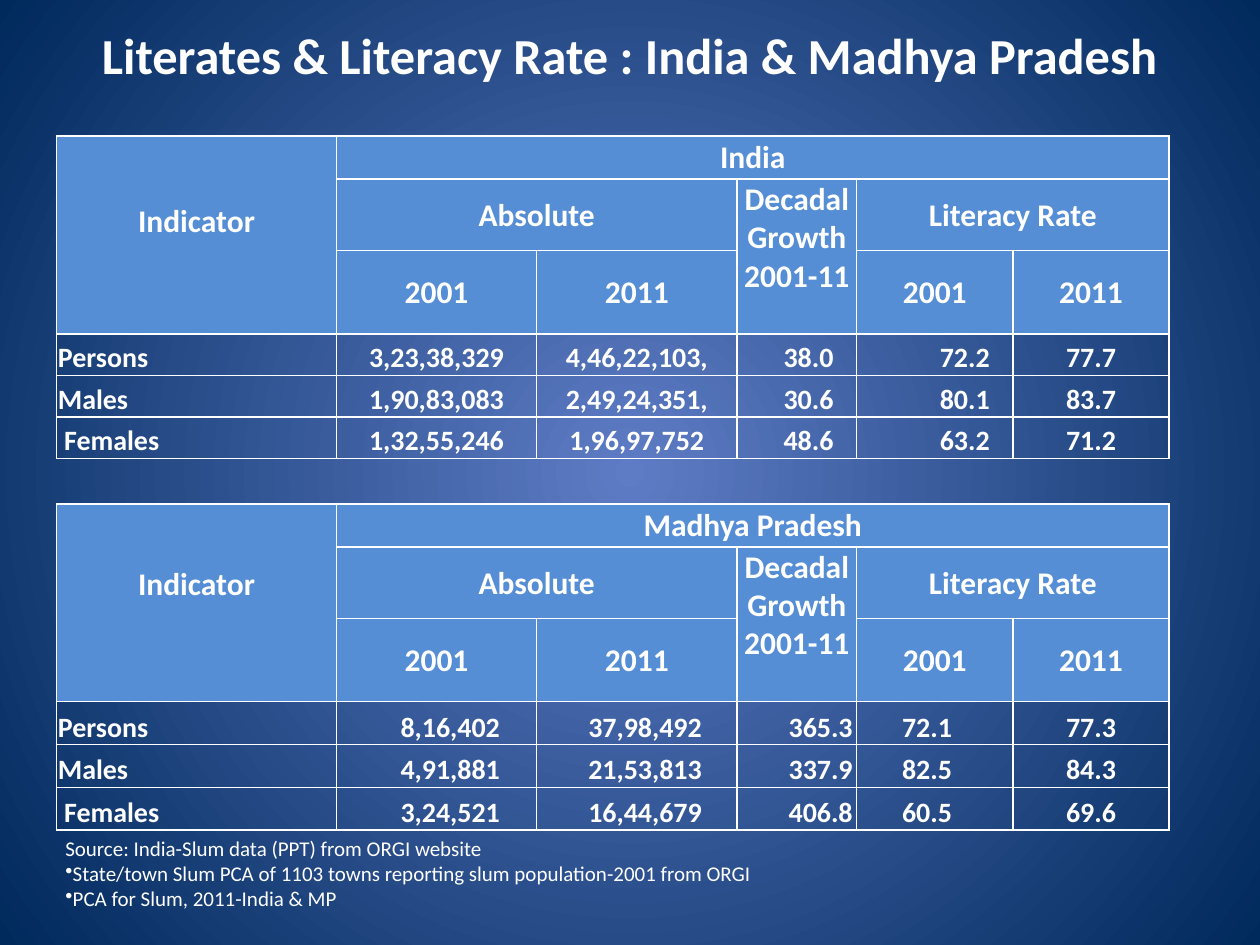
import pptx
import pptx.util
import pptx.dml.color
import pptx.enum.text
import pptx.oxml
import pptx.oxml.ns
from lxml import etree

Inches = pptx.util.Inches
qn = pptx.oxml.ns.qn
ALIGN = pptx.enum.text.PP_ALIGN
ANCHOR = pptx.enum.text.MSO_ANCHOR

THEME = {
    "font": "Calibri",
    "white": "FFFFFF", "header": "558ED5",
    "glow": "5E7CC5", "edge": "00295C",
    "title": 28.8, "head": 18, "body": 16, "note": 12,
}


def rgb(name):
    return pptx.dml.color.RGBColor.from_string(THEME[name])


def write(tf, text, size="body", bold=True, align=ALIGN.LEFT, indent=0, bullet=None, new=False):
    """Put one formatted paragraph into a text frame."""
    p = tf.add_paragraph() if new else tf.paragraphs[0]
    p.alignment = align
    pPr = p._p.get_or_add_pPr()
    pPr.set("marL", str(Inches(indent)))
    pPr.set("indent", "0")
    if bullet:
        etree.SubElement(pPr, qn("a:buChar")).set("char", bullet)
    r = p.add_run()
    r.text = text
    r.font.name = THEME["font"]
    r.font.size = pptx.util.Pt(THEME[size])
    r.font.bold = bold
    r.font.color.rgb = rgb("white")


prs = pptx.Presentation()
prs.slide_width, prs.slide_height = Inches(10), Inches(7.5)
s = prs.slides.add_slide(prs.slide_layouts[6])

# Background: radial gradient from the centre
fill = s.background.fill
fill.gradient()
for stop, name in zip(fill.gradient_stops, ("glow", "edge")):
    stop.color.rgb = rgb(name)
grad = s.element.find(".//" + qn("a:gradFill"))
grad.remove(grad.find(qn("a:lin")))
radial = etree.SubElement(grad, qn("a:path"))
radial.set("path", "circle")
centre = etree.SubElement(radial, qn("a:fillToRect"))
for side in "ltrb":
    centre.set(side, "50000")

# Title
tf = s.shapes.add_textbox(Inches(0.5), Inches(0.08), Inches(9), Inches(0.7)).text_frame
tf.word_wrap = True
tf.vertical_anchor = ANCHOR.MIDDLE
write(tf, "Literates & Literacy Rate : India & Madhya Pradesh", size="title", align=ALIGN.CENTER)

# Table contents; an indent of None centres the column
COLS = [2.22, 1.59, 1.59, 0.95, 1.24, 1.24]
HEAD_ROWS = [0.34, 0.57, 0.66]
TABLES = [
    {"region": "India", "top": 1.08, "row": 0.33, "lift": 0.22,
     "indents": [0, None, None, 0.36, 0.65, None],
     "rows": [
         ["Persons", "3,23,38,329", "4,46,22,103,", "38.0", "72.2", "77.7"],
         ["Males", "1,90,83,083", "2,49,24,351,", "30.6", "80.1", "83.7"],
         ["Females", "1,32,55,246", "1,96,97,752", "48.6", "63.2", "71.2"]]},
    {"region": "Madhya Pradesh", "top": 4, "row": 0.34, "lift": 0.3,
     "indents": [0, 0.5, 0.4, 0.4, 0.35, None],
     "rows": [
         ["Persons", "8,16,402", "37,98,492", "365.3", "72.1", "77.3"],
         ["Males", "4,91,881", "21,53,813", "337.9", "82.5", "84.3"],
         ["Females", "3,24,521", "16,44,679", "406.8", "60.5", "69.6"]]},
]

for data in TABLES:
    heights = HEAD_ROWS + [data["row"]] * len(data["rows"])
    table = s.shapes.add_table(len(heights), len(COLS), Inches(0.45), Inches(data["top"]),
                               Inches(sum(COLS)), Inches(sum(heights))).table
    table.first_row = table.horz_banding = False
    for col, width in zip(table.columns, COLS):
        col.width = Inches(width)
    for row, height in zip(table.rows, heights):
        row.height = Inches(height)

    # Borders, margins and fills
    for i, row in enumerate(table.rows):
        for cell in row.cells:
            tcPr = cell._tc.get_or_add_tcPr()
            for side in "LRTB":
                tcPr.append(pptx.oxml.parse_xml(
                    f'<a:ln{side} xmlns:a="http://schemas.openxmlformats.org/drawingml/2006/main" '
                    f'w="12700"><a:solidFill><a:srgbClr val="{THEME["white"]}"/></a:solidFill></a:ln{side}>'))
            cell.margin_left = cell.margin_right = cell.margin_top = Inches(0.01)
            cell.margin_bottom = 0
            if i < len(HEAD_ROWS):
                cell.fill.solid()
                cell.fill.fore_color.rgb = rgb("header")
                cell.vertical_anchor = ANCHOR.MIDDLE
            else:
                cell.fill.background()
                cell.vertical_anchor = ANCHOR.BOTTOM

    # Header: row, column, row span, column span, text
    for i, j, down, across, text in [
            (0, 0, 3, 1, "Indicator"), (0, 1, 1, 5, data["region"]),
            (1, 1, 1, 2, "Absolute"), (1, 3, 2, 1, "Decadal Growth 2001-11"),
            (1, 4, 1, 2, "Literacy Rate"),
            (2, 1, 1, 1, "2001"), (2, 2, 1, 1, "2011"),
            (2, 4, 1, 1, "2001"), (2, 5, 1, 1, "2011")]:
        cell = table.cell(i, j)
        if down * across > 1:
            cell.merge(table.cell(i + down - 1, j + across - 1))
        write(cell.text_frame, text, size="head", align=ALIGN.CENTER)
    table.cell(0, 0).margin_bottom = Inches(data["lift"])
    table.cell(1, 3).vertical_anchor = ANCHOR.TOP

    # Body
    for i, values in enumerate(data["rows"], len(HEAD_ROWS)):
        for j, (text, indent) in enumerate(zip(values, data["indents"])):
            if text == "Females":
                indent = 0.05
            write(table.cell(i, j).text_frame, text, indent=indent or 0,
                  align=ALIGN.CENTER if indent is None else ALIGN.LEFT)

# Sources
tf = s.shapes.add_textbox(Inches(0.42), Inches(6.58), Inches(9.33), Inches(0.71)).text_frame
tf.word_wrap = True
write(tf, "Source: India-Slum data (PPT) from ORGI website", size="note", bold=False)
for text in ("State/town Slum PCA of 1103 towns reporting slum population-2001 from ORGI",
             "PCA for Slum, 2011-India & MP"):
    write(tf, text, size="note", bold=False, bullet="•", new=True)

prs.save("out.pptx")
